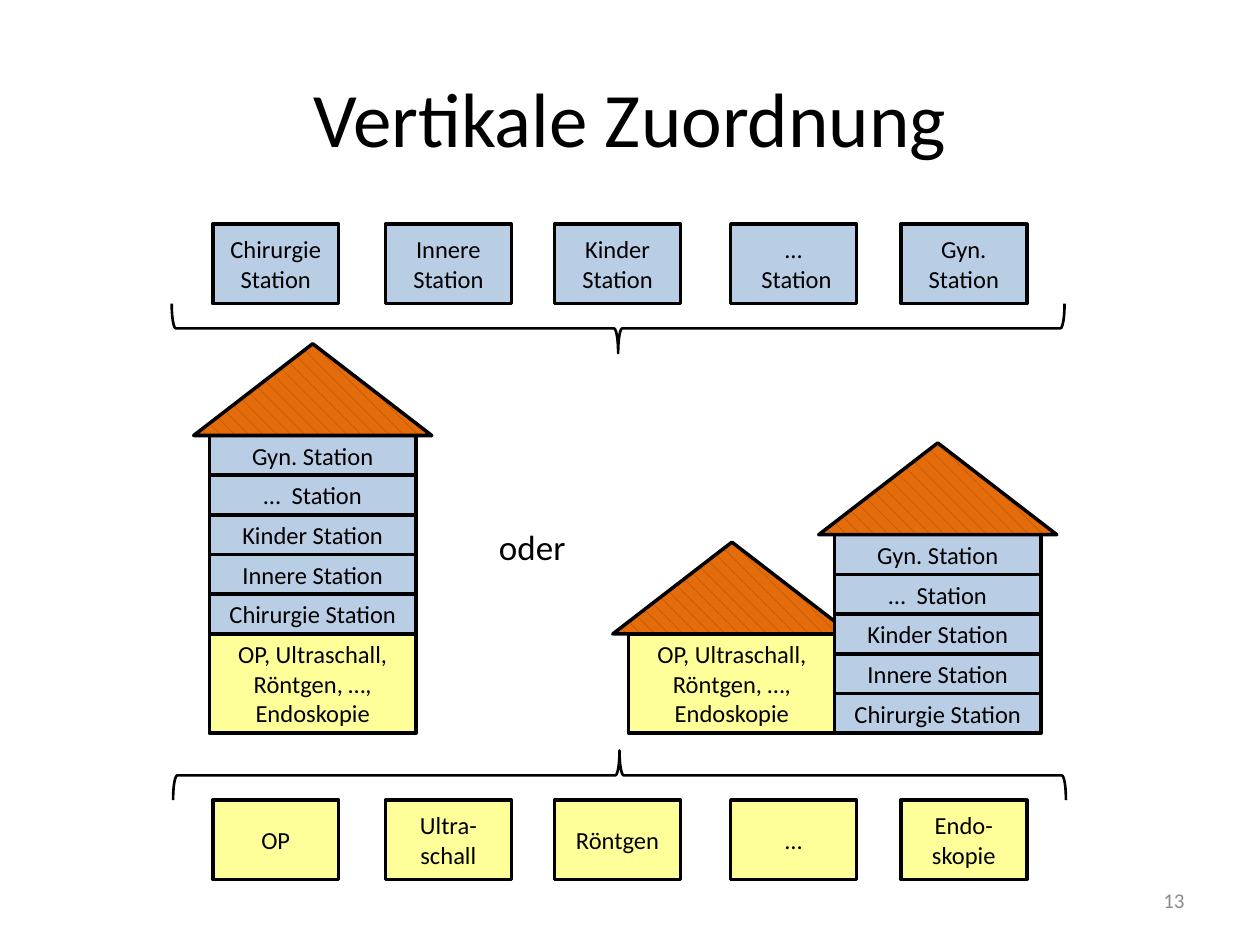
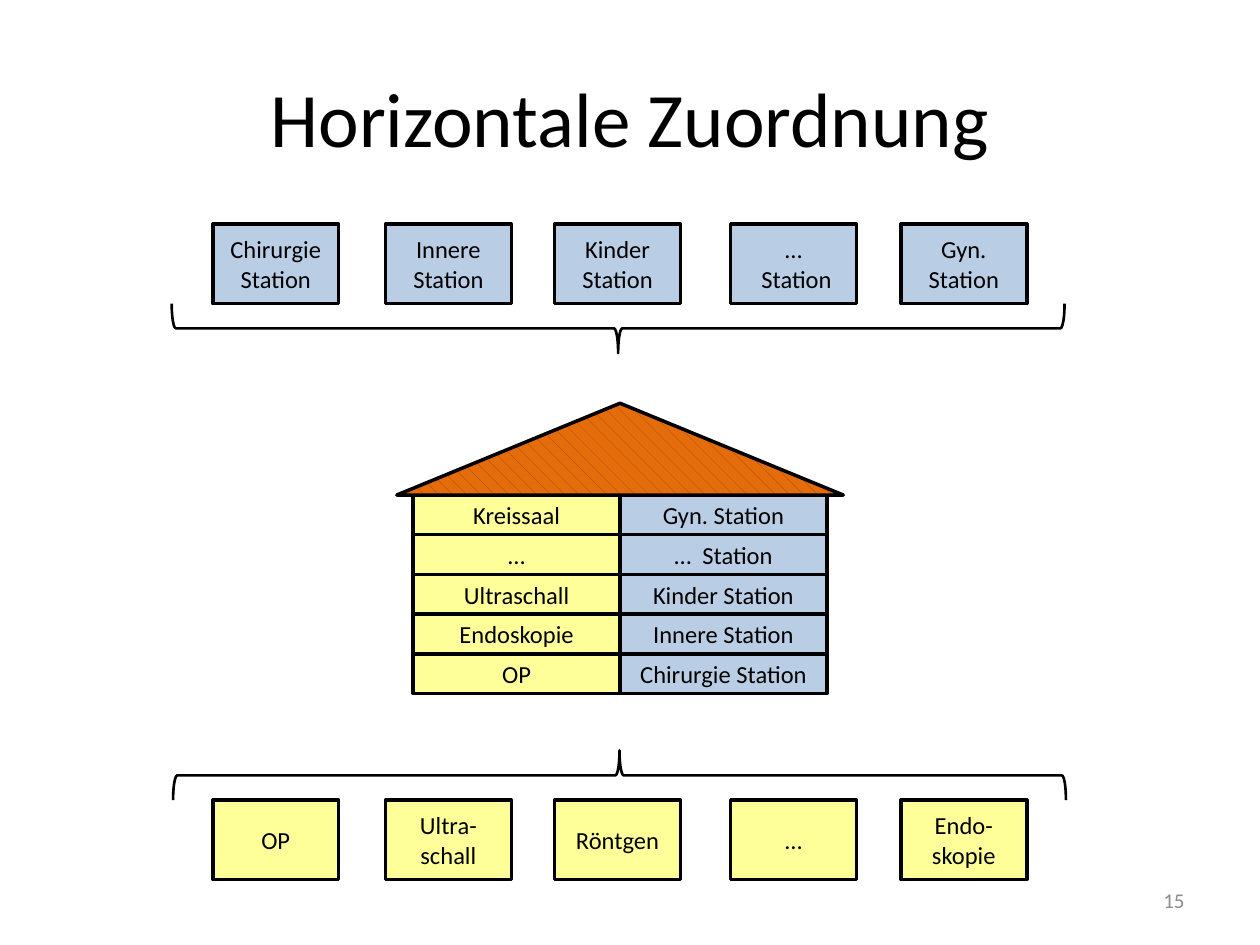
from dataclasses import dataclass

from pptx import Presentation
from pptx import util as u
from pptx.dml.color import RGBColor
from pptx.enum import dml, shapes, text

# Shared style
FONT = "Calibri"
BLACK, GREY = "000000", "8C8C8C"
WARD, CLINIC = "B9CDE5", "FFFF99"
ROOF, TILE = "E46C0A", "984807"
CENTER, RIGHT = text.PP_ALIGN.CENTER, text.PP_ALIGN.RIGHT

# Shared measures in cm
BOX_X = (4.29, 7.77, 11.18, 14.73, 18.16)
BOX_W, BOX_H = 2.54, 1.6
FLOOR_W, FLOOR_H, BASE_H = 4.17, 0.8, 2.0
ROOF_H, ROOF_W, WIDE_ROOF_W = 1.85, 4.8, 9.0
BRACE_W, BRACE_L = 1.0, 18.0

# Shared wording; floors run from the ground up
WARD_BOXES = ("Chirurgie Station", "Innere Station", "Kinder Station",
              "…\n Station", "Gyn. Station")
CLINIC_BOXES = ("OP", "Ultra-schall", "Röntgen", "…", "Endo-skopie")
WARD_FLOORS = ("Chirurgie Station", "Innere Station", "Kinder Station",
               "…  Station", "Gyn. Station")
CLINIC_FLOORS = ("OP", "Endoskopie", "Ultraschall", "…", "Kreissaal")
CLINIC_BASE = "OP, Ultraschall, Röntgen, …, Endoskopie"


@dataclass(frozen=True)
class Row:
    """A line of equal boxes with the brace that gathers them."""
    labels: tuple[str, ...]
    color: str
    top: float
    brace_x: float
    brace_y: float
    turn: int


@dataclass(frozen=True)
class Storeys:
    """Floors stacked upwards from the ground line."""
    labels: tuple[str, ...]
    color: str
    left: float
    ground: float
    height: float = FLOOR_H

    @property
    def top(self) -> float:
        return self.ground - len(self.labels) * self.height


ROWS = (Row(WARD_BOXES, WARD, 4.52, 12.46, 6.62, 90),
        Row(CLINIC_BOXES, CLINIC, 16.13, 12.49, 15.63, 270))


def rgb(color: str) -> RGBColor:
    return RGBColor.from_string(color)


def write(sp, content: str, *, size=14, color=BLACK, align=CENTER,
          anchor=text.MSO_ANCHOR.MIDDLE, wrap=True) -> None:
    tf = sp.text_frame
    tf.word_wrap = wrap
    tf.vertical_anchor = anchor
    for i, line in enumerate(content.split("\n")):
        p = tf.add_paragraph() if i else tf.paragraphs[0]
        p.alignment = align
        r = p.add_run()
        r.text = line
        r.font.name, r.font.size = FONT, u.Pt(size)
        r.font.color.rgb = rgb(color)


def add_label(s, content: str, x: float, y: float, w: float, h: float,
              **style):
    sp = s.shapes.add_textbox(u.Cm(x), u.Cm(y), u.Cm(w), u.Cm(h))
    write(sp, content, **style)
    return sp


def add_outline(s, kind, x: float, y: float, w: float, h: float, line=2.0):
    sp = s.shapes.add_shape(kind, u.Cm(x), u.Cm(y), u.Cm(w), u.Cm(h))
    sp.shadow.inherit = False
    sp.line.color.rgb = rgb(BLACK)
    sp.line.width = u.Pt(line)
    return sp


def add_box(s, label: str, color: str, x: float, y: float, w: float,
            h: float) -> None:
    sp = add_outline(s, shapes.MSO_SHAPE.RECTANGLE, x, y, w, h)
    sp.fill.solid()
    sp.fill.fore_color.rgb = rgb(color)
    write(sp, label)


def add_roof(s, center: float, eaves: float, width: float = ROOF_W) -> None:
    sp = add_outline(s, shapes.MSO_SHAPE.ISOSCELES_TRIANGLE,
                     center - width / 2, eaves - ROOF_H, width, ROOF_H)
    sp.fill.patterned()
    sp.fill.pattern = dml.MSO_PATTERN.SHINGLE
    sp.fill.fore_color.rgb = rgb(TILE)
    sp.fill.back_color.rgb = rgb(ROOF)


def add_storeys(s, st: Storeys) -> None:
    for i, label in enumerate(st.labels, start=1):
        add_box(s, label, st.color, st.left, st.ground - i * st.height,
                FLOOR_W, st.height)


def add_house(s, *stack: Storeys) -> None:
    for st in stack:
        add_storeys(s, st)
    add_roof(s, stack[-1].left + FLOOR_W / 2, stack[-1].top)


def add_row(s, row: Row) -> None:
    for x, label in zip(BOX_X, row.labels):
        add_box(s, label, row.color, x, row.top, BOX_W, BOX_H)
    brace = add_outline(s, shapes.MSO_SHAPE.RIGHT_BRACE,
                        row.brace_x - BRACE_W / 2, row.brace_y - BRACE_L / 2,
                        BRACE_W, BRACE_L, line=1.5)
    brace.fill.background()
    brace.rotation = row.turn


def add_frame(prs, title: str, number: int):
    """Start a slide with its title, page number and both rows."""
    s = prs.slides.add_slide(prs.slide_layouts[6])
    add_label(s, title, 1.27, 0.76, 22.86, 3.18, size=44)
    add_label(s, str(number), 18.2, 17.65, 5.93, 1.01, size=12, color=GREY,
              align=RIGHT)
    for row in ROWS:
        add_row(s, row)
    return s


def build_vertical(prs) -> None:
    s = add_frame(prs, "Vertikale Zuordnung", 13)
    ground = 14.78
    base = Storeys((CLINIC_BASE,), CLINIC, 4.22, ground, BASE_H)
    # One tower with the clinic at its foot
    add_house(s, base, Storeys(WARD_FLOORS, WARD, base.left, base.top))
    add_label(s, "oder", 9.8, 10.46, 1.86, 1.12, size=20,
              anchor=text.MSO_ANCHOR.TOP, wrap=False)
    # Low clinic, partly behind the ward tower
    add_house(s, Storeys((CLINIC_BASE,), CLINIC, 12.67, ground, BASE_H))
    add_house(s, Storeys(WARD_FLOORS, WARD, 16.82, ground))


def build_horizontal(prs) -> None:
    s = add_frame(prs, "Horizontale Zuordnung", 15)
    middle, ground = 12.5, 13.98
    clinic = Storeys(CLINIC_FLOORS, CLINIC, middle - FLOOR_W, ground)
    wards = Storeys(WARD_FLOORS, WARD, middle, ground)
    # Clinic and ward on each floor under a shared roof
    add_storeys(s, clinic)
    add_storeys(s, wards)
    add_roof(s, middle, wards.top, WIDE_ROOF_W)


def main() -> None:
    prs = Presentation()
    prs.slide_width, prs.slide_height = u.Cm(25.4), u.Cm(19.05)
    build_vertical(prs)
    build_horizontal(prs)
    prs.save("out.pptx")


if __name__ == "__main__":
    main()
